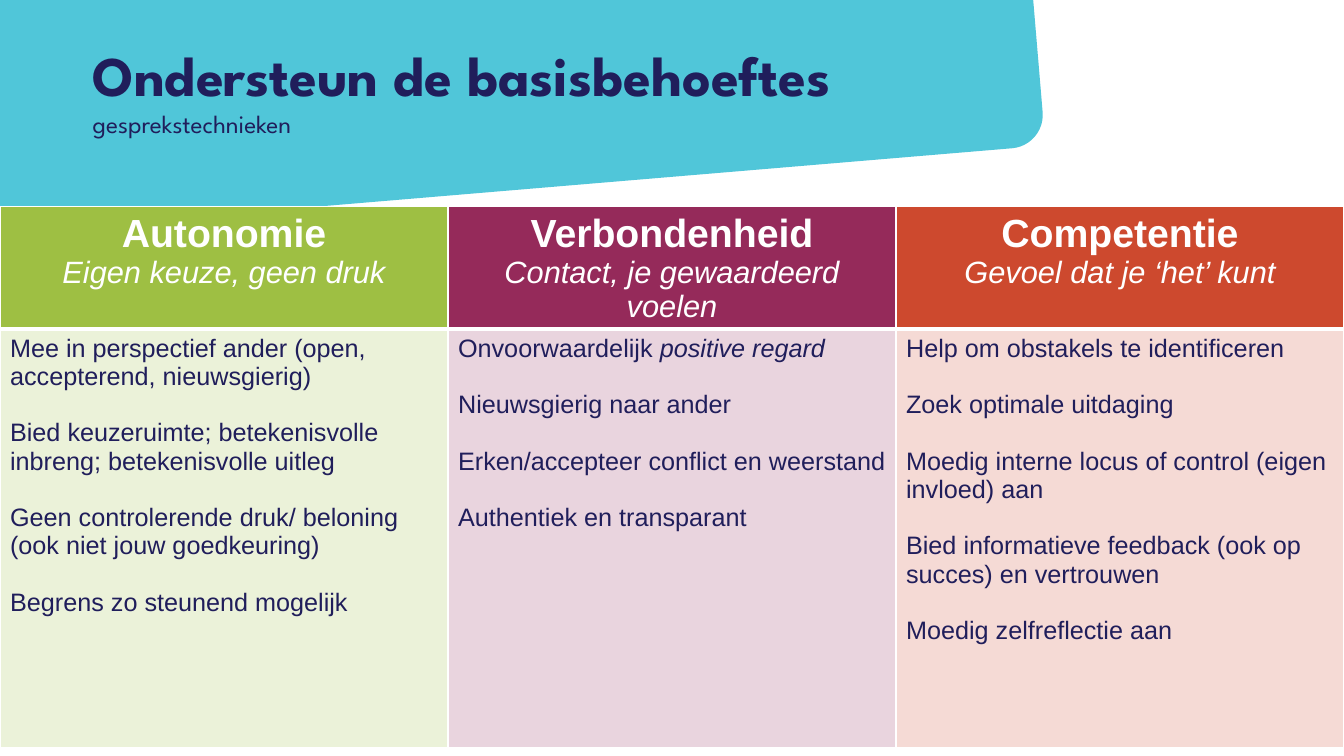
import pptx
import pptx.dml.color
import pptx.enum.shapes
import pptx.enum.text
import pptx.oxml
import pptx.oxml.ns
import pptx.util
from dataclasses import dataclass

Inches = pptx.util.Inches
Pt = pptx.util.Pt
Align = pptx.enum.text.PP_ALIGN
Anchor = pptx.enum.text.MSO_ANCHOR


@dataclass(frozen=True)
class Theme:
    navy: str = "201E5B"
    white: str = "FFFFFF"
    banner: str = "50C6D9"
    heading_font: str = "League Spartan"
    body_font: str = "Arial"
    title_size: int = 40
    need_size: int = 28
    motto_size: int = 22
    body_size: int = 18
    tip_gap: float = 20.2
    tint: int = 20


THEME = Theme()

# Need, motto, colour, techniques; a technique is a list of (text, italic) spans.
NEEDS = [
    ("Autonomie", "Eigen keuze, geen druk", "9EBF43", [
        [("Mee in perspectief ander (open, accepterend, nieuwsgierig)", False)],
        [("Bied keuzeruimte; betekenisvolle inbreng; betekenisvolle uitleg", False)],
        [("Geen controlerende druk/ beloning (ook niet jouw goedkeuring)", False)],
        [("Begrens zo steunend mogelijk", False)],
    ]),
    ("Verbondenheid", "Contact, je gewaardeerd voelen", "952A5A", [
        [("Onvoorwaardelijk ", False), ("positive regard", True)],
        [("Nieuwsgierig naar ander", False)],
        [("Erken/accepteer conflict en weerstand", False)],
        [("Authentiek en transparant", False)],
    ]),
    ("Competentie", "Gevoel dat je ‘het’ kunt", "CD492E", [
        [("Help om obstakels te identificeren", False)],
        [("Zoek optimale uitdaging", False)],
        [("Moedig interne locus of control (eigen invloed) aan", False)],
        [("Bied informatieve feedback (ook op succes) en vertrouwen", False)],
        [("Moedig zelfreflectie aan", False)],
    ]),
]


def rgb(color):
    return pptx.dml.color.RGBColor.from_string(color)


def add_span(para, text, font, size, color, bold=False, italic=False):
    span = para.add_run()
    span.text = text
    span.font.name = font
    span.font.size = Pt(size)
    span.font.color.rgb = rgb(color)
    span.font.bold = bold
    span.font.italic = italic


def prepare_frame(frame, anchor):
    frame.margin_left = frame.margin_right = 0
    frame.margin_top = frame.margin_bottom = 0
    frame.word_wrap = True
    frame.auto_size = pptx.enum.text.MSO_AUTO_SIZE.NONE
    frame.vertical_anchor = anchor


def add_banner(page, left, top, width, height):
    banner = page.shapes.add_shape(
        pptx.enum.shapes.MSO_SHAPE.ROUNDED_RECTANGLE,
        Inches(left), Inches(top), Inches(width), Inches(height))
    banner.adjustments[0] = 0.117
    banner.rotation = 355.2
    banner.shadow.inherit = False
    banner.fill.solid()
    banner.fill.fore_color.rgb = rgb(THEME.banner)
    banner.line.fill.background()
    page.shapes.title.element.addprevious(banner.element)


def add_heading(page, left, top, width, height):
    """Fill the upper half of the box with the title, the lower with the subtitle."""
    half = height / 2
    title = page.shapes.title
    title.left, title.top = Inches(left), Inches(top)
    title.width, title.height = Inches(width), Inches(half)
    prepare_frame(title.text_frame, Anchor.MIDDLE)
    para = title.text_frame.paragraphs[0]
    para.alignment = Align.LEFT
    add_span(para, "Ondersteun de basisbehoeftes", THEME.heading_font,
             THEME.title_size, THEME.navy, bold=True)

    subtitle = page.shapes.add_textbox(
        Inches(left), Inches(top + half), Inches(width), Inches(half))
    prepare_frame(subtitle.text_frame, Anchor.TOP)
    para = subtitle.text_frame.paragraphs[0]
    para.line_spacing = 0.9
    add_span(para, "gesprekstechnieken", THEME.heading_font,
             THEME.body_size, THEME.navy)


def style_cell(cell, color, bottom_width, opacity=None):
    """Draw white borders and a fill, see-through if an opacity in percent is given."""
    properties = cell._tc.get_or_add_tcPr()
    for side in "LRTB":
        width = Pt(bottom_width if side == "B" else 1)
        properties.append(pptx.oxml.parse_xml(
            f'<a:ln{side} {pptx.oxml.ns.nsdecls("a")} w="{width}"><a:solidFill>'
            f'<a:srgbClr val="{THEME.white}"/></a:solidFill></a:ln{side}>'))
    cell.fill.solid()
    cell.fill.fore_color.rgb = rgb(color)
    if opacity is not None:
        swatch = properties.find(
            f'{pptx.oxml.ns.qn("a:solidFill")}/{pptx.oxml.ns.qn("a:srgbClr")}')
        swatch.append(pptx.oxml.parse_xml(
            f'<a:alpha {pptx.oxml.ns.nsdecls("a")} val="{opacity * 1000}"/>'))


def fill_header(cell, need, motto):
    first = cell.text_frame.paragraphs[0]
    add_span(first, need, THEME.body_font, THEME.need_size, THEME.white, bold=True)
    second = cell.text_frame.add_paragraph()
    add_span(second, motto, THEME.body_font, THEME.motto_size, THEME.white, italic=True)
    first.alignment = second.alignment = Align.CENTER


def fill_techniques(cell, techniques):
    frame = cell.text_frame
    for index, spans in enumerate(techniques):
        para = frame.add_paragraph() if index else frame.paragraphs[0]
        if index:
            para.space_before = Pt(THEME.tip_gap)
        for text, italic in spans:
            add_span(para, text, THEME.body_font, THEME.body_size,
                     THEME.navy, italic=italic)


def add_needs_table(page, left, top, width, header_height, body_height):
    table = page.shapes.add_table(
        2, len(NEEDS), Inches(left), Inches(top), Inches(width),
        Inches(header_height + body_height)).table
    table.rows[0].height = Inches(header_height)
    table.rows[1].height = Inches(body_height)
    for index, (need, motto, color, techniques) in enumerate(NEEDS):
        table.columns[index].width = Inches(width / len(NEEDS))
        header, body = table.cell(0, index), table.cell(1, index)
        style_cell(header, color, 3)
        style_cell(body, color, 1, THEME.tint)
        fill_header(header, need, motto)
        fill_techniques(body, techniques)


def main():
    deck = pptx.Presentation()
    deck.slide_width, deck.slide_height = Inches(13.33), Inches(7.5)
    page = deck.slides.add_slide(deck.slide_layouts.get_by_name("Title Only"))
    add_banner(page, -1, -0.92, 11.27, 2.84)
    add_heading(page, 0.92, 0.36, 11.5, 1.5)
    add_needs_table(page, 0, 2.05, 13.33, 1.07, 4.15)
    deck.save("out.pptx")


if __name__ == "__main__":
    main()
